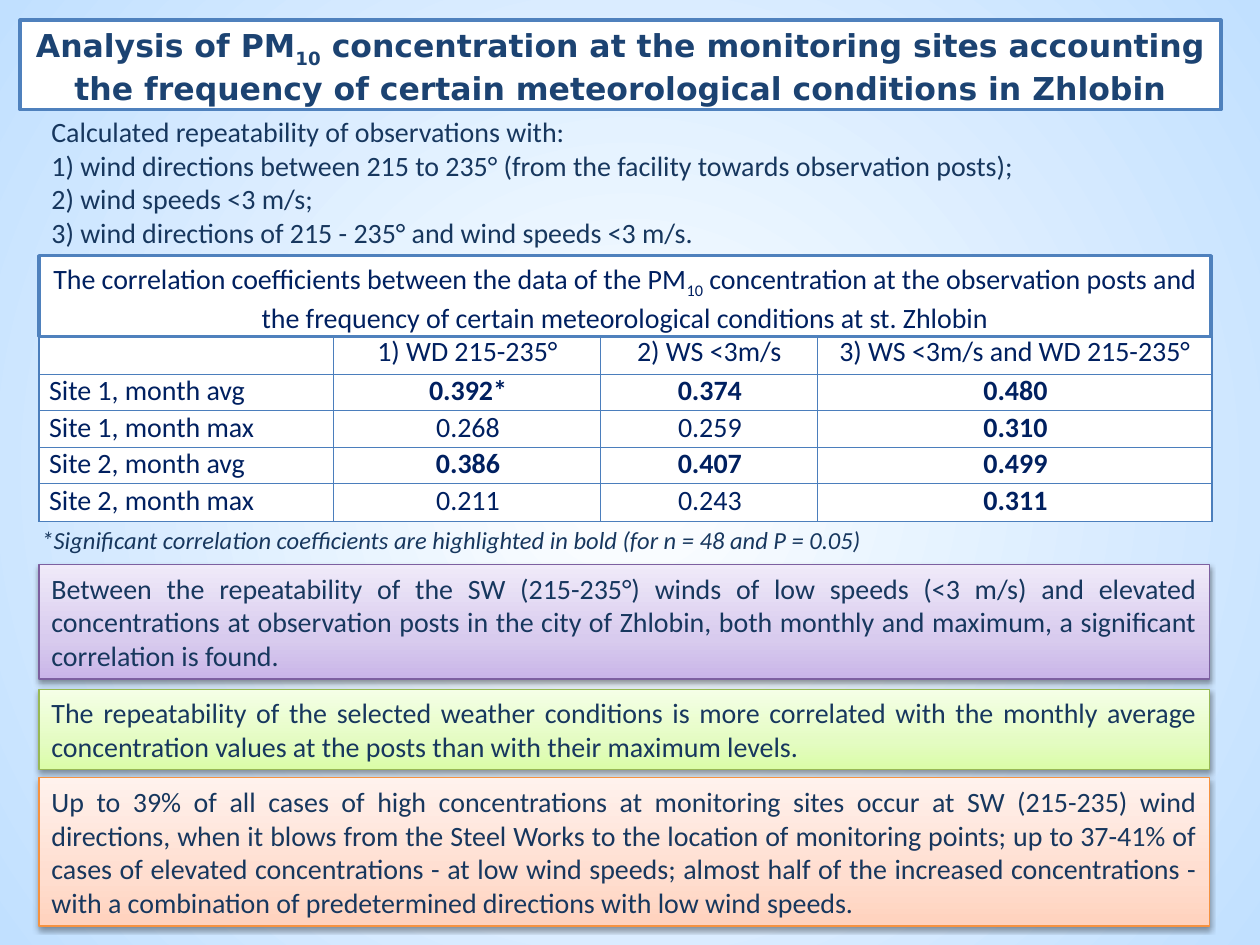
import pptx
import pptx.dml.color
import pptx.enum.shapes
import pptx.enum.text
import pptx.oxml
import pptx.oxml.ns
import pptx.util
from pptx.util import Inches

ALIGN = pptx.enum.text.PP_ALIGN
ANCHOR = pptx.enum.text.MSO_ANCHOR
NS = pptx.oxml.ns.nsdecls("a", "p")
LINEAR_UP = '<a:lin ang="16200000" scaled="1"/>'
FROM_CENTRE = ('<a:path path="circle"><a:fillToRect l="50000" t="50000" '
               'r="50000" b="50000"/></a:path>')


def rgb(hex_colour):
    return pptx.dml.color.RGBColor.from_string(hex_colour)


def gradient(stops, direction):
    """Return a gradFill element; stops are (percent, colour) pairs."""
    stop_xml = "".join(
        f'<a:gs pos="{percent * 1000}"><a:srgbClr val="{colour}"/></a:gs>'
        for percent, colour in stops)
    return pptx.oxml.parse_xml(
        f'<a:gradFill {NS} rotWithShape="1"><a:gsLst>{stop_xml}</a:gsLst>'
        f'{direction}</a:gradFill>')


class Deck:
    font = "Calibri"
    navy = "002060"
    slate = "17375E"
    border = "4F81BD"
    grid = "4B7EBC"
    white = "FFFFFF"

    def __init__(self, slide):
        self.slide = slide

    def background(self, stops):
        bg = pptx.oxml.parse_xml(f"<p:bg {NS}><p:bgPr><a:effectLst/></p:bgPr></p:bg>")
        bg[0].insert(0, gradient(stops, FROM_CENTRE))
        self.slide._element.cSld.insert(0, bg)

    def add_run(self, paragraph, text, colour, size=16, bold=False, italic=False,
                font=None, baseline=0):
        run = paragraph.add_run()
        run.text = text
        run.font.name = font or self.font
        run.font.size = pptx.util.Pt(size)
        run.font.bold = bold
        run.font.italic = italic
        run.font.color.rgb = rgb(colour)
        if baseline:
            run.font._element.set("baseline", str(baseline * 1000))

    def set_text(self, shape, paragraphs, colour, align=ALIGN.LEFT, anchor=ANCHOR.TOP,
                 **style):
        """Fill a shape; each paragraph is a list of (text, baseline) runs."""
        frame = shape.text_frame
        frame.word_wrap = True
        frame.auto_size = pptx.enum.text.MSO_AUTO_SIZE.SHAPE_TO_FIT_TEXT
        frame.vertical_anchor = anchor
        for index, runs in enumerate(paragraphs):
            paragraph = frame.add_paragraph() if index else frame.paragraphs[0]
            paragraph.alignment = align
            for text, baseline in runs:
                self.add_run(paragraph, text, colour, baseline=baseline, **style)

    def text(self, box, lines, **style):
        shape = self.slide.shapes.add_textbox(*map(Inches, box))
        self.set_text(shape, [[(line, 0)] for line in lines], self.slate, **style)

    def rectangle(self, box, line, width):
        shape = self.slide.shapes.add_shape(
            pptx.enum.shapes.MSO_SHAPE.RECTANGLE, *map(Inches, box))
        shape.shadow.inherit = False
        shape.fill.solid()
        shape.fill.fore_color.rgb = rgb(self.white)
        shape.line.color.rgb = rgb(line)
        shape.line.width = pptx.util.Pt(width)
        return shape

    def heading(self, box, runs, colour, **style):
        self.set_text(self.rectangle(box, self.border, 2), [runs], colour,
                      align=ALIGN.CENTER, **style)

    def finding(self, box, text, line, colours):
        """Add a shaded conclusion box with a soft shadow."""
        shape = self.rectangle(box, line, 0.75)
        properties = shape._element.spPr
        solid = properties.find(pptx.oxml.ns.qn("a:solidFill"))
        properties.replace(solid, gradient(zip((0, 35, 100), colours), LINEAR_UP))
        properties.find(pptx.oxml.ns.qn("a:effectLst")).append(pptx.oxml.parse_xml(
            f'<a:outerShdw {NS} blurRad="{pptx.util.Pt(3.1)}" dist="{pptx.util.Pt(1.6)}" '
            'dir="5400000" rotWithShape="0"><a:srgbClr val="000000">'
            '<a:alpha val="38000"/></a:srgbClr></a:outerShdw>'))
        self.set_text(shape, [[(text, 0)]], self.slate, ALIGN.JUSTIFY, ANCHOR.MIDDLE)

    def cell_borders(self, cell):
        properties = cell._tc.get_or_add_tcPr()
        for index, side in enumerate(("lnL", "lnR", "lnT", "lnB")):
            properties.insert(index, pptx.oxml.parse_xml(
                f'<a:{side} {NS} w="{pptx.util.Pt(0.75)}"><a:solidFill>'
                f'<a:srgbClr val="{self.grid}"/></a:solidFill></a:{side}>'))

    def table(self, box, widths, heights, rows):
        """Add a grid; a value that starts with ! is significant and set in bold."""
        table = self.slide.shapes.add_table(
            len(rows), len(widths), *map(Inches, box)).table
        for column, width in zip(table.columns, widths):
            column.width = Inches(width)
        for row, height in zip(table.rows, heights):
            row.height = Inches(height)
        for r, values in enumerate(rows):
            for c, value in enumerate(values):
                cell = table.cell(r, c)
                cell.fill.solid()
                cell.fill.fore_color.rgb = rgb(self.white)
                cell.margin_left = cell.margin_right = Inches(0.07)
                cell.margin_top = cell.margin_bottom = 0
                self.cell_borders(cell)
                if not value:
                    continue
                paragraph = cell.text_frame.paragraphs[0]
                paragraph.alignment = ALIGN.CENTER if c else ALIGN.LEFT
                if r:
                    indents = paragraph._p.get_or_add_pPr()
                    indents.set("marL", str(Inches(0.26)))
                    indents.set("indent", str(Inches(-0.25)))
                self.add_run(paragraph, value.lstrip("!"), self.navy,
                             bold=value.startswith("!"))


def main():
    presentation = pptx.Presentation()
    presentation.slide_width = Inches(10)
    presentation.slide_height = Inches(7.5)
    deck = Deck(presentation.slides.add_slide(presentation.slide_layouts[6]))
    left, width = 0.31, 9.3

    deck.background([(0, "FFFFFF"), (100, "C1E0FF")])
    deck.heading(
        (0.16, 0.16, 9.53, 0.71),
        [("Analysis of PM", 0), ("10", -25),
         (" concentration at the monitoring sites accounting the frequency of certain "
          "meteorological conditions in Zhlobin", 0)],
        "1C4372", size=18, bold=True, font="DejaVu Sans")
    deck.table(
        (left, 2.66, width, 1.48), (2.34, 2.12, 1.72, 3.13),
        (0.31, 0.29, 0.29, 0.29, 0.3),
        [("", "1) WD 215-235°", "2) WS <3m/s", "3) WS <3m/s and WD 215-235°"),
         ("Site 1, month avg", "!0.392*", "!0.374", "!0.480"),
         ("Site 1, month max", "0.268", "0.259", "!0.310"),
         ("Site 2, month avg", "!0.386", "!0.407", "!0.499"),
         ("Site 2, month max", "0.211", "0.243", "!0.311")])
    deck.text(
        (0.23, 4.12, 9.22, 0.34),
        ["*Significant correlation coefficients are highlighted in bold "
         "(for n = 48 and P = 0.05)"], size=14, italic=True)
    deck.heading(
        (left, 2.03, width, 0.64),
        [("The correlation coefficients between the data of the PM", 0), ("10", -25),
         (" concentration at the observation posts and the frequency of certain "
          "meteorological conditions at st. Zhlobin", 0)], deck.navy)
    deck.text(
        (left, 0.86, width, 1.18),
        ["Calculated repeatability of observations with:",
         "1) wind directions between 215 to 235° (from the facility towards "
         "observation posts);",
         "2) wind speeds <3 m/s;",
         "3) wind directions of 215 - 235° and wind speeds <3 m/s."])

    findings = [
        (4.48, 0.91, "7D60A0", ("C9B5E8", "D8CBEE", "F0EAF9"),
         "Between the repeatability of the SW (215-235°) winds of low speeds (<3 m/s) "
         "and elevated concentrations at observation posts in the city of Zhlobin, both "
         "monthly and maximum, a significant correlation is found."),
        (5.47, 0.64, "98B955", ("DAFDA7", "E4FCC2", "F5FFE7"),
         "The repeatability of the selected weather conditions is more correlated with "
         "the monthly average concentration values at the posts than with their maximum "
         "levels."),
        (6.17, 1.18, "F69240", ("FFD2BD", "FFDED0", "FFF2ED"),
         "Up to 39% of all cases of high concentrations at monitoring sites occur at SW "
         "(215-235) wind directions, when it blows from the Steel Works to the location "
         "of monitoring points; up to 37-41% of cases of elevated concentrations - at "
         "low wind speeds; almost half of the increased concentrations - with a "
         "combination of predetermined directions with low wind speeds."),
    ]
    for top, height, line, colours, text in findings:
        deck.finding((left, top, 9.29, height), text, line, colours)

    presentation.save("out.pptx")


if __name__ == "__main__":
    main()
